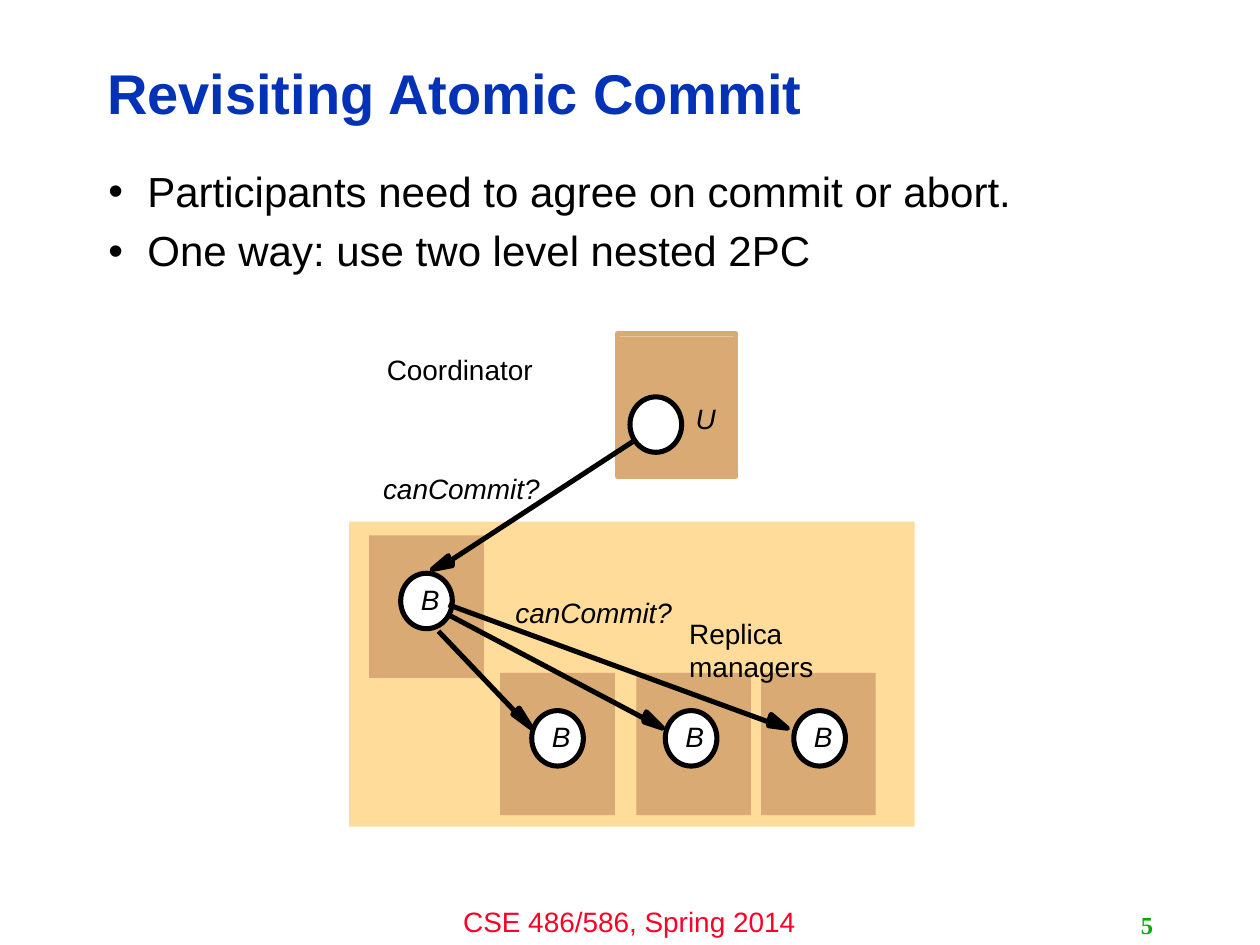
from dataclasses import dataclass

from lxml.etree import SubElement
from pptx import Presentation
from pptx.dml.color import RGBColor
from pptx.enum.shapes import MSO_CONNECTOR as CONNECTOR, MSO_SHAPE as SHAPE
from pptx.enum.text import MSO_ANCHOR as ANCHOR, MSO_AUTO_SIZE as AUTO_SIZE, PP_ALIGN as ALIGN
from pptx.oxml.ns import qn
from pptx.util import Inches, Pt


@dataclass(frozen=True)
class Theme:
    font: str = "Arial"
    number_font: str = "Times New Roman"
    title: RGBColor = RGBColor(0x03, 0x32, 0xB7)
    ink: RGBColor = RGBColor(0, 0, 0)
    white: RGBColor = RGBColor(0xFF, 0xFF, 0xFF)
    footer: RGBColor = RGBColor(0xFC, 0x01, 0x28)
    number: RGBColor = RGBColor(0x00, 0xAE, 0x00)
    group: RGBColor = RGBColor(0xFF, 0xDC, 0x99)
    server: RGBColor = RGBColor(0xD9, 0xAA, 0x73)
    title_size: int = 32
    body_size: int = 24
    label_size: int = 16
    number_size: int = 14
    line: float = 2.88


THEME = Theme()
SERVER_W, SERVER_H = 0.91, 1.13
CIRCLE_W, CIRCLE_H = 0.41, 0.44

# Left and top of each server box, then left of its circle
REPLICAS = [
    (2.93, 4.25, 3.18),
    (6.04, 5.34, 6.3),
    (3.97, 5.34, 4.22),
    (5.05, 5.34, 5.28),
]

# Start and end of each line, then the other corners of its arrowhead
MESSAGES = [
    ((5.03, 3.5), (3.59, 4.44), [(3.59, 4.49), (3.43, 4.52), (3.56, 4.41), (3.56, 4.44)]),
    ((3.56, 4.8), (6.1, 5.73), [(6.12, 5.67), (6.25, 5.78), (6.1, 5.76)]),
    ((3.56, 4.88), (5.11, 5.7), [(5.13, 5.65), (5.26, 5.78), (5.11, 5.73)]),
    ((3.48, 5.01), (4.09, 5.65), [(4.12, 5.62), (4.22, 5.78), (4.07, 5.67)]),
]


def place(shape, left, top, width, height):
    shape.left, shape.top = Inches(left), Inches(top)
    shape.width, shape.height = Inches(width), Inches(height)


def format_runs(tf, size, color, font=THEME.font, bold=False, italic=False):
    for p in tf.paragraphs:
        for r in p.runs:
            r.font.size, r.font.name = Pt(size), font
            r.font.color.rgb = color
            r.font.bold, r.font.italic = bold, italic


def fill_title(s, text):
    title = s.shapes.title
    place(title, 0.75, 0.36, 7.98, 0.81)
    tf = title.text_frame
    tf.text = text
    tf.auto_size, tf.vertical_anchor = AUTO_SIZE.NONE, ANCHOR.MIDDLE
    tf.paragraphs[0].alignment = ALIGN.LEFT
    tf.paragraphs[0].line_spacing = 0.9
    format_runs(tf, THEME.title_size, THEME.title, bold=True)


def fill_body(s, lines):
    body = s.placeholders[1]
    place(body, 0.76, 1.31, 8.4, 5.39)
    tf = body.text_frame
    tf.text = "\n".join(lines)
    tf.auto_size = AUTO_SIZE.NONE
    for p in tf.paragraphs:
        p.line_spacing, p.space_before = 0.9, Pt(8)
        pPr = p._p.get_or_add_pPr()
        pPr.set("marL", str(Inches(0.31)))
        pPr.set("indent", str(-Inches(0.31)))
        SubElement(pPr, qn("a:buChar")).set("char", "•")
    format_runs(tf, THEME.body_size, THEME.ink)


def add_text(s, text, left, top, width, height, align=ALIGN.LEFT, wrap=True):
    tb = s.shapes.add_textbox(*map(Inches, (left, top, width, height)))
    tf = tb.text_frame
    tf.text = text
    tf.word_wrap = wrap
    tf.paragraphs[0].alignment = align
    return tf


def add_label(s, text, left, top, width, italic=False, wrap=False):
    tf = add_text(s, text, left, top, width, 0.27, wrap=wrap)
    tf.margin_left = tf.margin_right = tf.margin_top = tf.margin_bottom = 0
    format_runs(tf, THEME.label_size, THEME.ink, italic=italic)


def paint(shape, fill=None, line=None):
    shape.shadow.inherit = False
    if fill is None:
        shape.fill.background()
    else:
        shape.fill.solid()
        shape.fill.fore_color.rgb = fill
    if line is None:
        shape.line.fill.background()
    else:
        shape.line.color.rgb = line
        shape.line.width = Pt(THEME.line)


def add_box(s, left, top, width, height, fill=None, line=None):
    box = s.shapes.add_shape(SHAPE.RECTANGLE, *map(Inches, (left, top, width, height)))
    paint(box, fill, line)


def add_circle(s, left, top):
    circle = s.shapes.add_shape(SHAPE.OVAL, *map(Inches, (left, top, CIRCLE_W, CIRCLE_H)))
    paint(circle, THEME.white, THEME.ink)


def add_replica(s, left, top, circle_left):
    add_box(s, left, top, SERVER_W, SERVER_H, THEME.server)
    add_circle(s, circle_left, top + 0.3)
    add_label(s, "B", circle_left + 0.16, top + 0.37, 0.14, italic=True)


def add_message(s, start, end, corners):
    """Draw a line whose far end is the base of a solid arrowhead."""
    builder = s.shapes.build_freeform(*map(Inches, end))
    builder.add_line_segments([(Inches(x), Inches(y)) for x, y in corners], close=True)
    paint(builder.convert_to_shape(), THEME.ink, THEME.ink)
    line = s.shapes.add_connector(CONNECTOR.STRAIGHT, *map(Inches, start + end))
    line.line.color.rgb = THEME.ink
    line.line.width = Pt(THEME.line)
    SubElement(line._element.spPr, qn("a:effectLst"))


def add_footer(s):
    tf = add_text(s, "CSE 486/586, Spring 2014", 3.33, 7.13, 3.33, 0.37, ALIGN.CENTER)
    format_runs(tf, THEME.label_size, THEME.footer)
    tf = add_text(s, "5", 7.17, 7.18, 2.08, 0.32, ALIGN.RIGHT)
    tf.vertical_anchor = ANCHOR.MIDDLE
    format_runs(tf, THEME.number_size, THEME.number, THEME.number_font, bold=True)


def main():
    prs = Presentation()
    prs.slide_width, prs.slide_height = Inches(10), Inches(7.5)
    s = prs.slides.add_slide(prs.slide_layouts[1])

    fill_title(s, "Revisiting Atomic Commit")
    fill_body(s, [
        "Participants need to agree on commit or abort.",
        "One way: use two level nested 2PC",
    ])
    add_footer(s)

    add_box(s, 2.77, 4.14, 4.49, 2.42, THEME.group)
    for replica in REPLICAS:
        add_replica(s, *replica)

    add_box(s, 4.92, 2.67, SERVER_W, 1.1, THEME.server)
    add_box(s, 4.9, 2.65, 0.94, 1.13, line=THEME.server)
    add_label(s, "Coordinator", 3.07, 2.8, 1.17)
    add_label(s, "Replica managers", 5.47, 4.89, 1.65, wrap=True)
    add_label(s, "canCommit?", 3.04, 3.74, 1.32, italic=True)
    add_label(s, "U", 5.52, 3.19, 0.15, italic=True)
    add_circle(s, 5, 3.15)

    for message in MESSAGES:
        add_message(s, *message)
    add_label(s, "canCommit?", 4.09, 4.73, 1.32, italic=True)

    prs.save("out.pptx")


if __name__ == "__main__":
    main()
